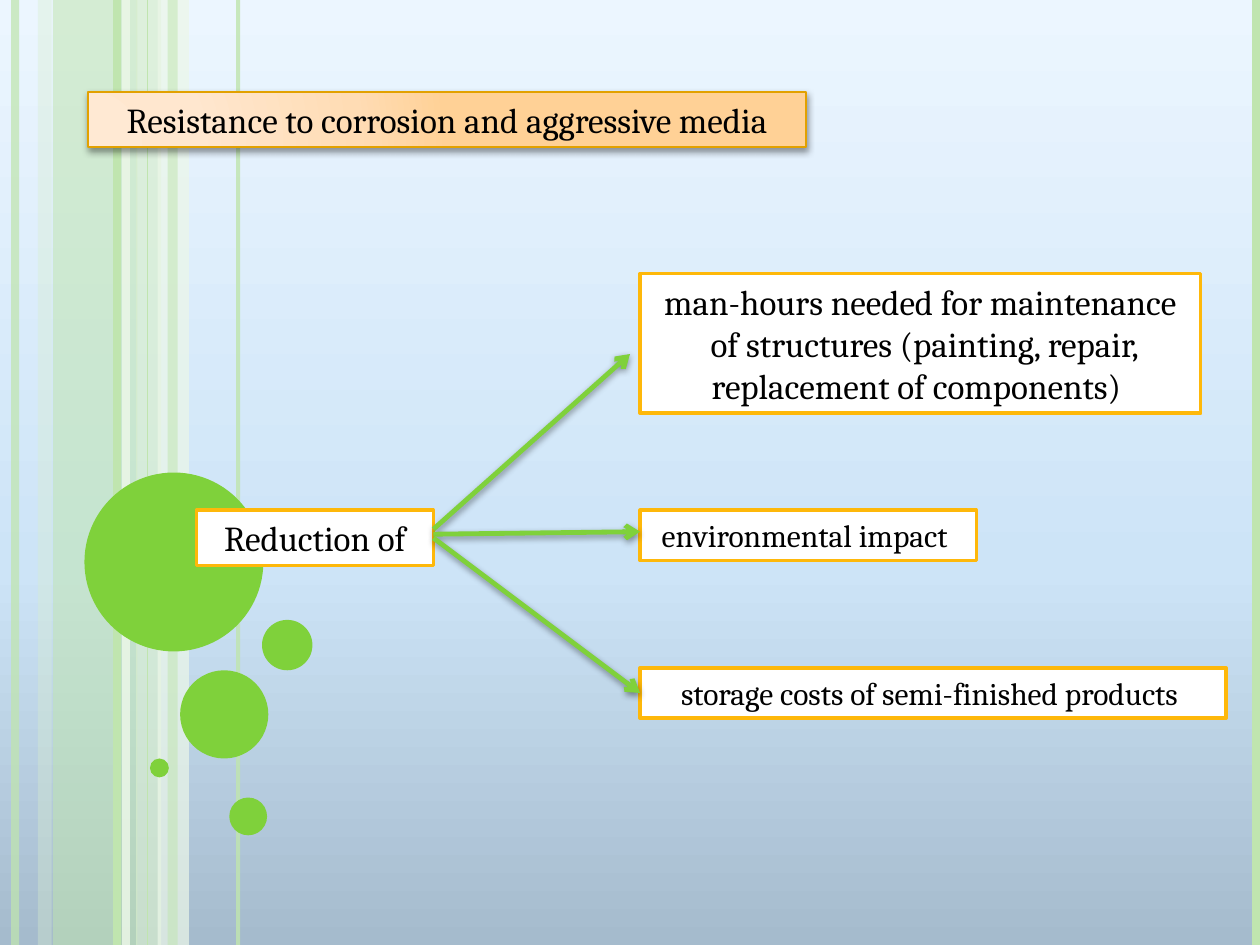
from lxml import etree
from pptx import Presentation
from pptx.dml.color import RGBColor
from pptx.enum import shapes as s, text as t
from pptx.oxml.ns import qn
from pptx.util import Inches, Pt

GREEN, PALE, MIST, FOAM = "7FD13B", "C0E5AF", "D8EECE", "ECF7E8"
GOLD, WHITE, BLACK = "FEB80A", "FFFFFF", "000000"


def add(node, tag, **attrs):
    return etree.SubElement(node, qn(tag), {k: str(v) for k, v in attrs.items()})


def paint(fill, tone, alpha=100):
    fill.solid()
    fill.fore_color.rgb = RGBColor.from_string(tone)
    if alpha < 100:
        return alpha * 1000


def fade(node, alpha):
    if alpha < 100:
        for tone in node.iter(qn("a:srgbClr")):
            add(tone, "a:alpha", val=alpha * 1000)


def blend(grad, stops):
    for child in list(grad):
        grad.remove(child)
    group = add(grad, "a:gsLst")
    for spot, tone in stops:
        add(add(group, "a:gs", pos=spot * 1000), "a:srgbClr", val=tone)


def shade(effect, alpha, gap):
    cast = add(effect, "a:outerShdw", blurRad=Pt(4), dist=Pt(gap),
               dir=5400000, algn="ctr", rotWithShape=0)
    add(add(cast, "a:srgbClr", val=BLACK), "a:alpha", val=alpha * 1000)


def block(slide, kind, spot, tone, alpha=100):
    shape = slide.shapes.add_shape(kind, *map(Inches, spot))
    shape.shadow.inherit = False
    paint(shape.fill, tone)
    fade(shape.element.spPr, alpha)
    shape.line.fill.background()
    return shape


def line(slide, start, end, tone, width, alpha=100):
    link = slide.shapes.add_connector(
        s.MSO_CONNECTOR.STRAIGHT, *map(Inches, start + end))
    paint(link.line.fill, tone)
    link.line.width = Pt(width)
    fade(link.element.spPr, alpha)
    add(link.element.spPr, "a:effectLst")
    return link


def arrow(slide, start, end):
    link = line(slide, start, end, GREEN, 2.75)
    props = link.element.spPr
    add(props.find(qn("a:ln")), "a:tailEnd", type="arrow")
    shade(props.find(qn("a:effectLst")), 42, 1.6)


def label(slide, spot, words, size=20, wrap=True, edge=GOLD, width=2):
    box = block(slide, s.MSO_SHAPE.RECTANGLE, spot, WHITE)
    paint(box.line.fill, edge)
    box.line.width = Pt(width)
    frame = box.text_frame
    frame.text = words
    frame.word_wrap = wrap
    frame.auto_size = t.MSO_AUTO_SIZE.SHAPE_TO_FIT_TEXT
    frame.vertical_anchor = t.MSO_ANCHOR.TOP
    for para in frame.paragraphs:
        para.alignment = t.PP_ALIGN.CENTER
        for run in para.runs:
            run.font.name = "Cambria"
            run.font.size = Pt(size)
            paint(run.font.fill, BLACK)
    return box


def title(slide):
    box = label(slide, (0.7, 0.73, 5.7, 0.44),
                "Resistance to corrosion and aggressive media",
                edge="E2A100", width=1)
    box.fill.gradient()
    props = box.element.spPr
    grad = props.find(qn("a:gradFill"))
    blend(grad, [(0, "FFE9D3"), (30, "FFE7CF"), (75, "FFDCB4"), (100, "FFD196")])
    glow = add(grad, "a:path", path="circle")
    add(glow, "a:fillToRect", l=5000, t=100000, r=120000, b=10000)
    shade(props.find(qn("a:effectLst")), 40, 2)


def sky(slide):
    slide.background.fill.gradient()
    grad = slide.element.find(".//" + qn("a:gradFill"))
    blend(grad, [(0, "A5BBCD"), (40, "CDE4F7"), (100, "ECF6FF")])
    add(grad, "a:lin", ang=270 * 60000, scaled=0)


def decor(slide):
    def band(left, width, tone, alpha):
        block(slide, s.MSO_SHAPE.RECTANGLE, (left, 0, width, 7.5), tone, alpha)

    for bar in [(0.42, 0.67, PALE, 54), (0.3, 0.11, MIST, 36),
                (1.08, 0.2, MIST, 70), (1.25, 0.25, FOAM, 71)]:
        band(*bar)
    for x, tone, width, alpha in [
            (0.12, PALE, 4.5, 73), (1, FOAM, 4.5, 83), (0.93, PALE, 4.5, 100),
            (1.89, PALE, 2.25, 82), (1.17, PALE, 0.75, 100),
            (9.97, PALE, 4.5, 100)]:
        line(slide, (x, 0), (x, 7.5), tone, width, alpha)
    band(1.33, 0.08, PALE, 51)
    for x, y, size in [(0.67, 3.75, 1.42), (1.43, 5.32, 0.7), (1.19, 6.02, 0.15),
                       (1.82, 6.33, 0.3), (2.08, 4.92, 0.4)]:
        block(slide, s.MSO_SHAPE.OVAL, (x, y, size, size), GREEN)


def main():
    deck = Presentation()
    deck.slide_width, deck.slide_height = Inches(10), Inches(7.5)
    slide = deck.slides.add_slide(deck.slide_layouts[6])
    sky(slide)
    decor(slide)
    title(slide)
    label(slide, (1.56, 4.05, 1.88, 0.44), "Reduction of")
    hours = label(slide, (5.08, 2.17, 4.45, 1.11),
                  "man-hours needed for maintenance\n"
                  " of structures (painting, repair, replacement of components) ")
    hours.text_frame.vertical_anchor = t.MSO_ANCHOR.MIDDLE
    label(slide, (5.08, 4.05, 2.67, 0.4), "environmental impact ", 18, False)
    label(slide, (5.08, 5.3, 4.65, 0.4),
          "storage costs of semi-finished products ", 18, False)
    for y, end in [(4.2, (5, 2.81)), (4.24, (5.08, 4.22)), (4.27, (5.08, 5.5))]:
        arrow(slide, (3.44, y), end)
    deck.save("out.pptx")


if __name__ == "__main__":
    main()
